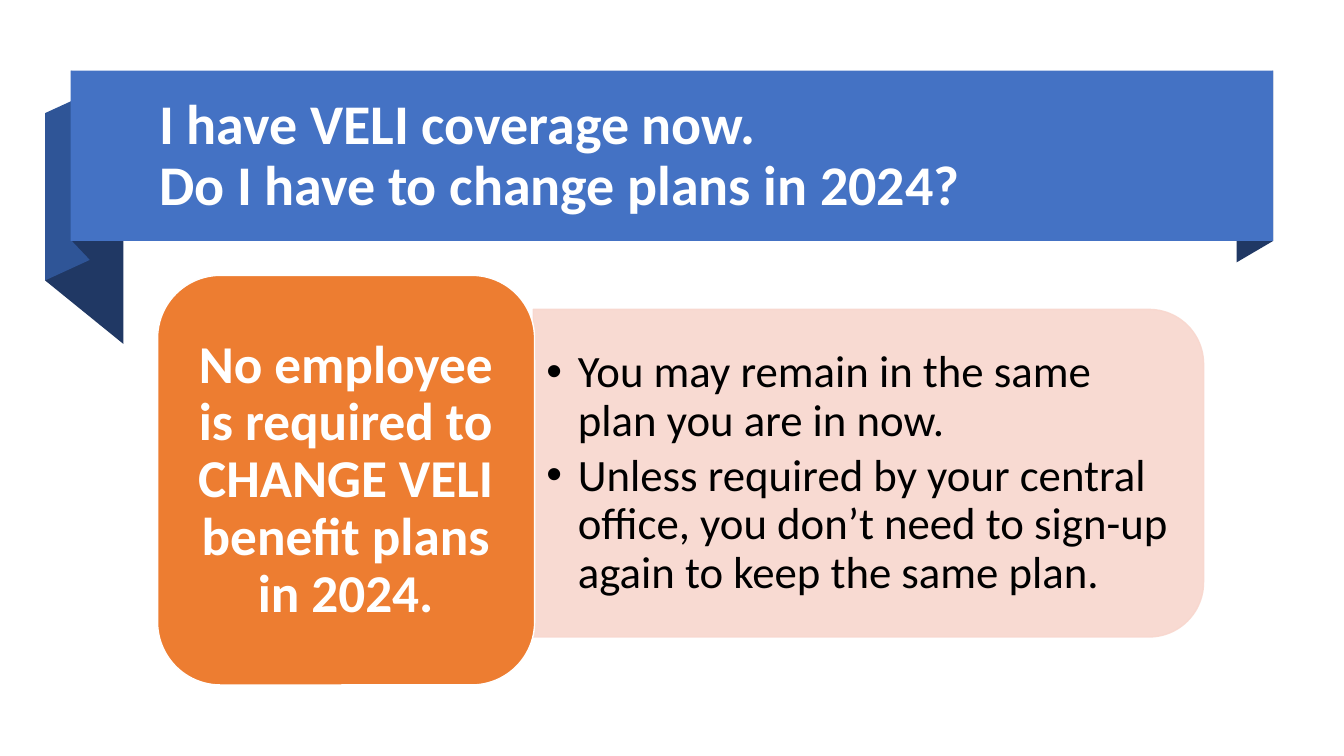
from dataclasses import dataclass

from lxml import etree
from pptx import Presentation
from pptx import util as u
from pptx.dml import color
from pptx.enum import shapes, text
from pptx.oxml import ns


@dataclass(frozen=True)
class Theme:
    font: str = "Calibri"
    title_size: float = 40
    callout_size: float = 38
    body_size: float = 32
    line_spacing: float = 0.9
    white: str = "FFFFFF"
    black: str = "000000"
    banner: str = "4472C4"
    fold: str = "2F5597"
    fold_dark: str = "203864"
    callout: str = "ED7D31"
    panel: str = "F8D7CE"
    panel_opacity: int = 90


@dataclass(frozen=True)
class Box:
    left: float
    top: float
    width: float
    height: float

    def lengths(self) -> list[u.Pt]:
        return [u.Pt(side) for side in (self.left, self.top, self.width, self.height)]


@dataclass(frozen=True)
class Fold:
    """A ribbon fold: two upright edges of equal height, one on each side."""
    left: float
    right: float
    left_top: float
    right_top: float
    height: float
    fill: str


THEME = Theme()
SHAPE = shapes.MSO_SHAPE

FOLDS = [
    Fold(883.3, 909.4, 65.7, 50.4, 121.7, THEME.fold_dark),
    Fold(32.2, 88.2, 80.8, 126.2, 119.5, THEME.fold_dark),
    Fold(32.2, 64.1, 80.8, 66.2, 119.5, THEME.fold),
    Fold(51.1, 64.1, 50.4, 64.1, 121.4, THEME.fold_dark),
]
BANNER = Box(50.4, 50.4, 859, 121.7)
TITLE = Box(106.6, 59.8, 787.7, 104.4)
PANEL = Box(503.3, 98.6, 234, 478.8)
BODY = Box(380.9, 232.6, 468, 211)
CALLOUT = Box(112.6, 196.7, 269.3, 292.6)
CALLOUT_TEXT = Box(125.3, 210.2, 243.4, 266.4)


def paint(shape, fill: str, line: str | None = None) -> None:
    shape.shadow.inherit = False
    shape.fill.solid()
    shape.fill.fore_color.rgb = color.RGBColor.from_string(fill)
    if line:
        shape.line.color.rgb = color.RGBColor.from_string(line)
        shape.line.width = u.Pt(1)
    else:
        shape.line.fill.background()


def add_block(page, kind: SHAPE, box: Box, fill: str, line: str | None = None):
    shape = page.shapes.add_shape(kind, *box.lengths())
    paint(shape, fill, line)
    return shape


def add_fold(page, fold: Fold) -> None:
    corners = [
        (fold.right, fold.right_top + fold.height),
        (fold.left, fold.left_top + fold.height),
        (fold.left, fold.left_top),
        (fold.right, fold.right_top),
    ]
    points = [(u.Pt(x), u.Pt(y)) for x, y in corners]
    builder = page.shapes.build_freeform(*points[0])
    builder.add_line_segments(points[1:], close=True)
    paint(builder.convert_to_shape(), fold.fill)


def set_opacity(shape, percent: int) -> None:
    for tint in shape._element.spPr.iter(ns.qn("a:srgbClr")):
        etree.SubElement(tint, ns.qn("a:alpha")).set("val", str(percent * 1000))


def add_bullet(para, indent: float) -> None:
    properties = para._p.get_or_add_pPr()
    properties.set("marL", str(u.Pt(indent)))
    properties.set("indent", str(u.Pt(-indent)))
    etree.SubElement(properties, ns.qn("a:buFont")).set("typeface", "Arial")
    etree.SubElement(properties, ns.qn("a:buChar")).set("char", "•")


def add_text(page, box: Box, lines: list[str], *, size: float, ink: str,
             bold: bool = False, align=text.PP_ALIGN.LEFT,
             inset: tuple[float, float] = (7.2, 3.6),
             space_after: float = 0, bullet_indent: float = 0) -> None:
    """Each line is a paragraph; a vertical tab inside it breaks the line."""
    frame = page.shapes.add_textbox(*box.lengths()).text_frame
    frame.word_wrap = True
    frame.vertical_anchor = text.MSO_ANCHOR.MIDDLE
    frame.margin_left = frame.margin_right = u.Pt(inset[0])
    frame.margin_top = frame.margin_bottom = u.Pt(inset[1])
    for index, line in enumerate(lines):
        para = frame.add_paragraph() if index else frame.paragraphs[0]
        para.text = line
        para.alignment = align
        para.line_spacing = THEME.line_spacing
        para.space_after = u.Pt(space_after)
        if bullet_indent:
            add_bullet(para, bullet_indent)
        for span in para.runs:
            span.font.name = THEME.font
            span.font.size = u.Pt(size)
            span.font.bold = bold
            span.font.color.rgb = color.RGBColor.from_string(ink)


def main() -> None:
    deck = Presentation()
    deck.slide_width, deck.slide_height = u.Pt(960), u.Pt(540)
    page = deck.slides.add_slide(deck.slide_layouts[6])

    for fold in FOLDS:
        add_fold(page, fold)
    add_block(page, SHAPE.RECTANGLE, BANNER, THEME.banner)
    add_text(page, TITLE,
             ["I have VELI coverage now.\vDo I have to change plans in 2024?"],
             size=THEME.title_size, ink=THEME.white, bold=True)

    panel = add_block(page, SHAPE.ROUND_2_SAME_RECTANGLE, PANEL, THEME.panel, THEME.panel)
    panel.rotation = 90
    set_opacity(panel, THEME.panel_opacity)
    add_text(page, BODY,
             ["You may remain in the same plan you are in now.",
              "Unless required by your central office, you don’t need to sign-up "
              "again to keep the same plan."],
             size=THEME.body_size, ink=THEME.black, inset=(9.4, 5),
             space_after=0.15 * THEME.body_size, bullet_indent=22.5)

    add_block(page, SHAPE.ROUNDED_RECTANGLE, CALLOUT, THEME.callout, THEME.white)
    add_text(page, CALLOUT_TEXT,
             ["No employee is required to CHANGE VELI benefit plans in 2024."],
             size=THEME.callout_size, ink=THEME.white, bold=True,
             align=text.PP_ALIGN.CENTER, inset=(11.5, 5.8))

    deck.save("out.pptx")


if __name__ == "__main__":
    main()
